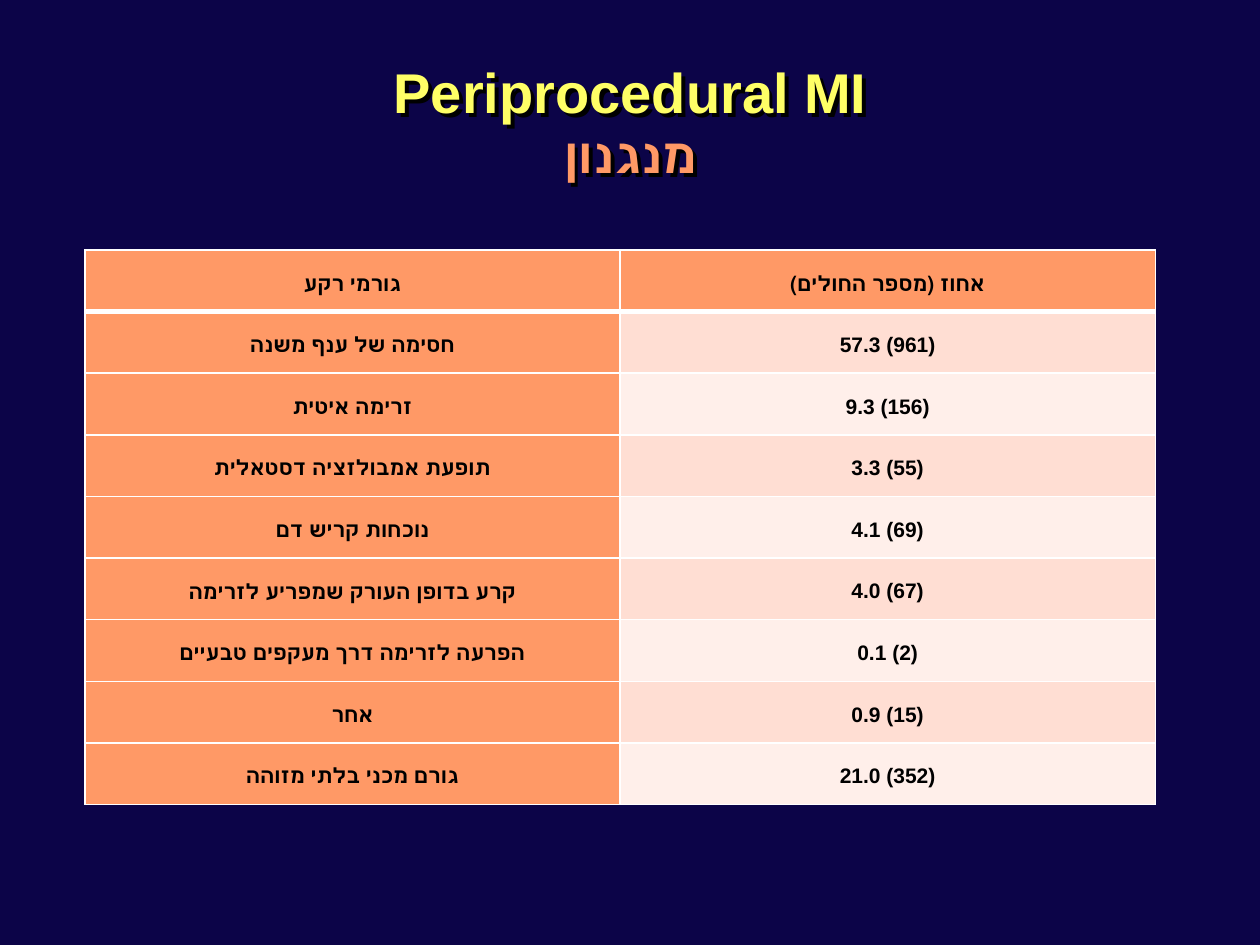
from dataclasses import dataclass

from lxml import etree
from pptx import Presentation
from pptx.dml.color import RGBColor
from pptx.enum.text import MSO_ANCHOR, PP_ALIGN
from pptx.oxml.ns import qn
from pptx.util import Cm, Pt

CENTER = PP_ALIGN.CENTER
MIDDLE = MSO_ANCHOR.MIDDLE
BOTTOM = MSO_ANCHOR.BOTTOM


@dataclass(frozen=True)
class Theme:
    font: str = "Arial"
    back: str = "0C0448"
    title: str = "FFFF66"
    accent: str = "FF9966"
    bands: tuple = ("FFDED3", "FFEFEA")
    ink: str = "000000"
    rule: str = "FFFFFF"
    big: int = 32
    mid: int = 28
    small: int = 12
    lead: float = 15.6
    thin: int = 1
    thick: int = 3


class Deck:
    """Draw styled elements on the current slide."""

    def __init__(self, theme):
        self.theme = theme
        self.show = Presentation()
        self.show.slide_width, self.show.slide_height = Cm(25.4), Cm(19.05)
        self.slide = self.show.slides.add_slide(self.show.slide_layouts[6])
        fill = self.slide.background.fill
        fill.solid()
        fill.fore_color.rgb = RGBColor.from_string(theme.back)

    def style(self, para, size, color):
        para.alignment = CENTER
        font = para.font
        font.name, font.size, font.bold = self.theme.font, Pt(size), True
        font.color.rgb = RGBColor.from_string(color)

    def shade(self, shape):
        props = shape._element.spPr
        effects = etree.SubElement(props, qn("a:effectLst"))
        shadow = etree.SubElement(effects, qn("a:outerShdw"), dist="40000", dir="2700000")
        etree.SubElement(shadow, qn("a:srgbClr"), val=self.theme.ink)

    def title(self, lines, left, top, width, height):
        shape = self.slide.shapes.add_textbox(left, top, width, height)
        self.shade(shape)
        frame = shape.text_frame
        frame.word_wrap = True
        frame.vertical_anchor = MIDDLE
        for i, (text, size, color) in enumerate(lines):
            para = frame.add_paragraph() if i else frame.paragraphs[0]
            para.text = text
            self.style(para, size, color)

    def border(self, cell, sides):
        props = cell._tc.get_or_add_tcPr()
        for i, (side, width) in enumerate(sides.items()):
            line = etree.Element(qn(f"a:ln{side}"), w=str(Pt(width)))
            fill = etree.SubElement(line, qn("a:solidFill"))
            etree.SubElement(fill, qn("a:srgbClr"), val=self.theme.rule)
            props.insert(i, line)

    def cell(self, cell, text, color, sides):
        cell.text = text
        cell.vertical_anchor = BOTTOM
        cell.margin_left = cell.margin_right = Cm(0.43)
        cell.margin_top = cell.margin_bottom = Cm(0.33)
        cell.fill.solid()
        cell.fill.fore_color.rgb = RGBColor.from_string(color)
        para = cell.text_frame.paragraphs[0]
        para.line_spacing = Pt(self.theme.lead)
        self.style(para, self.theme.small, self.theme.ink)
        if not text[0].isdigit():
            para._p.get_or_add_pPr().set("rtl", "1")
        self.border(cell, sides)

    def table(self, rows, left, top, width, height):
        look = self.theme
        shape = self.slide.shapes.add_table(len(rows), len(rows[0]), left, top, width, height)
        for r, row in enumerate(rows):
            sides = dict.fromkeys("LRTB", look.thin)
            if r == 0:
                sides["B"] = look.thick
            elif r == 1:
                sides["T"] = look.thick
            for c, text in enumerate(row):
                plain = r == 0 or c == 0
                color = look.accent if plain else look.bands[(r - 1) % 2]
                self.cell(shape.table.cell(r, c), text, color, sides)

    def save(self):
        self.show.save("out.pptx")


ROWS = [
    ("גורמי רקע", "אחוז (מספר החולים)"),
    ("חסימה של ענף משנה", "57.3 (961)"),
    ("זרימה איטית", "9.3 (156)"),
    ("תופעת אמבולזציה דסטאלית", "3.3 (55)"),
    ("נוכחות קריש דם", "4.1 (69)"),
    ("קרע בדופן העורק שמפריע לזרימה", "4.0 (67)"),
    ("הפרעה לזרימה דרך מעקפים טבעיים", "0.1 (2)"),
    ("אחר", "0.9 (15)"),
    ("גורם מכני בלתי מזוהה", "21.0 (352)"),
]


def main():
    theme = Theme()
    deck = Deck(theme)
    deck.table(ROWS, Cm(1.71), Cm(5.04), Cm(21.58), Cm(11.18))
    lines = [
        ("Periprocedural MI", theme.big, theme.title),
        ("מנגנון", theme.mid, theme.accent),
    ]
    deck.title(lines, Cm(2.54), Cm(1.02), Cm(20.34), Cm(2.82))
    deck.save()


if __name__ == "__main__":
    main()
